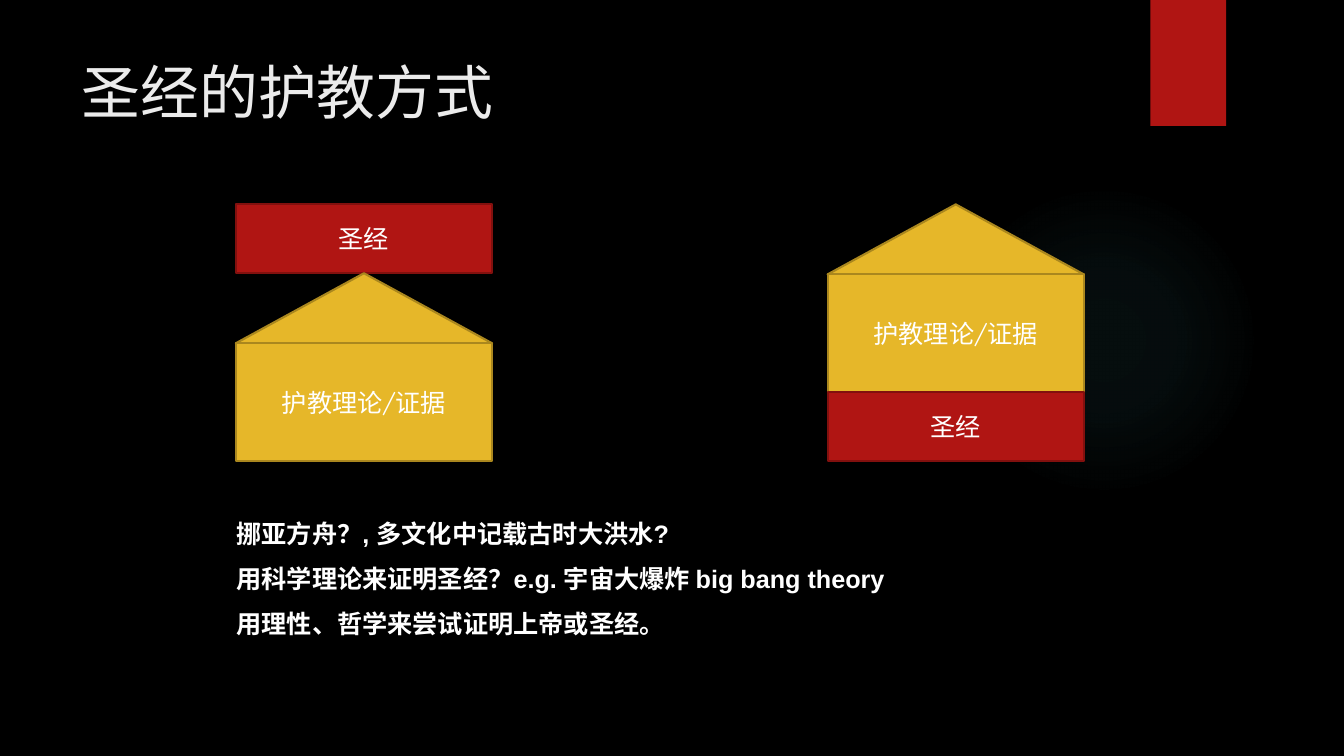
from dataclasses import dataclass

from lxml import etree
from pptx import Presentation
from pptx.dml.color import RGBColor
from pptx.enum.shapes import MSO_SHAPE
from pptx.enum.text import MSO_ANCHOR, MSO_AUTO_SIZE, PP_ALIGN
from pptx.oxml import parse_xml
from pptx.oxml.ns import nsdecls, qn
from pptx.util import Pt

RECT, TRIANGLE, OVAL = MSO_SHAPE.RECTANGLE, MSO_SHAPE.ISOSCELES_TRIANGLE, MSO_SHAPE.OVAL
TOP, MIDDLE = MSO_ANCHOR.TOP, MSO_ANCHOR.MIDDLE
LEFT, CENTER = PP_ALIGN.LEFT, PP_ALIGN.CENTER
FIXED = MSO_AUTO_SIZE.NONE
TITLE_ONLY = 5


@dataclass(frozen=True)
class Theme:
    background: str = "000000"
    red: str = "B01513"
    red_edge: str = "82100E"
    gold: str = "E6B729"
    gold_edge: str = "AA871E"
    title: str = "EBEBEB"
    text: str = "FFFFFF"
    glow: str = "50B9C1"
    heading_font: str = "Quicksand"
    body_font: str = "Arial"
    title_size: int = 42
    text_size: int = 18


theme = Theme()


def add_text(p, text, font, size, color, bold=False):
    r = p.add_run()
    r.text = text
    r.font.name = font
    r.font.size = Pt(size)
    r.font.bold = bold
    r.font.color.rgb = RGBColor.from_string(color)


def add_block(shapes, kind, x, y, w, h, fill, edge=None):
    """Add a flat filled shape, outlined only when an edge colour is given."""
    sp = shapes.add_shape(kind, Pt(x), Pt(y), Pt(w), Pt(h))
    sp.shadow.inherit = False
    sp.fill.solid()
    sp.fill.fore_color.rgb = RGBColor.from_string(fill)
    if edge:
        sp.line.color.rgb = RGBColor.from_string(edge)
        sp.line.width = Pt(1.5)
    else:
        sp.line.fill.background()
    return sp


prs = Presentation()
prs.slide_width, prs.slide_height = Pt(960), Pt(540)
s = prs.slides.add_slide(prs.slide_layouts[TITLE_ONLY])
s.background.fill.solid()
s.background.fill.fore_color.rgb = RGBColor.from_string(theme.background)

# Soft round glow and red ribbon behind the content
glow = add_block(s.shapes, OVAL, 677.5, 131.8, 221.8, 221.8, theme.glow)
gradient = parse_xml(
    f'<a:gradFill {nsdecls("a")} rotWithShape="1"><a:gsLst/><a:path path="circle">'
    '<a:fillToRect l="50000" t="50000" r="50000" b="50000"/></a:path></a:gradFill>')
for position, opacity in ((0, 7), (36, 6), (69, 0)):
    stop = etree.SubElement(gradient[0], qn("a:gs"), pos=str(position * 1000))
    color = etree.SubElement(stop, qn("a:srgbClr"), val=theme.glow)
    etree.SubElement(color, qn("a:alpha"), val=str(opacity * 1000))
solid = glow._element.spPr.find(qn("a:solidFill"))
solid.getparent().replace(solid, gradient)
add_block(s.shapes, RECT, 821.8, 0, 54, 90, theme.red)

title = s.shapes.title
title.left, title.top, title.width, title.height = Pt(51.1), Pt(36), Pt(741), Pt(110)
tf = title.text_frame
tf.word_wrap = True
tf.auto_size = FIXED
tf.vertical_anchor = TOP
p = tf.paragraphs[0]
p.alignment = LEFT
add_text(p, "圣经的护教方式", theme.heading_font, theme.title_size, theme.title)

# Two stacks of the same parts: Bible above the house, or Bible as its foundation
STACK_TOP, STACK_WIDTH = 146, 183
bible = (RECT, 49.2, theme.red, theme.red_edge, "圣经")
roof = (TRIANGLE, 50, theme.gold, theme.gold_edge, "")
wall = (RECT, 84, theme.gold, theme.gold_edge, "护教理论/证据")
for x, parts in ((168.5, (bible, roof, wall)), (591.2, (roof, wall, bible))):
    y = STACK_TOP
    for kind, height, fill, edge, label in parts:
        sp = add_block(s.shapes, kind, x, y, STACK_WIDTH, height, fill, edge)
        y += height
        if label:
            tf = sp.text_frame
            tf.word_wrap = True
            tf.vertical_anchor = MIDDLE
            p = tf.paragraphs[0]
            p.alignment = CENTER
            add_text(p, label, theme.heading_font, theme.text_size, theme.text)

questions = (
    "挪亚方舟？, 多文化中记载古时大洪水?",
    "用科学理论来证明圣经？e.g. 宇宙大爆炸 big bang theory",
    "用理性、哲学来尝试证明上帝或圣经。",
)
tf = s.shapes.add_textbox(Pt(161.8), Pt(355.7), Pt(592), Pt(160)).text_frame
tf.word_wrap = True
tf.auto_size = FIXED
for i, question in enumerate(questions):
    p = tf.add_paragraph() if i else tf.paragraphs[0]
    p.line_spacing = 1.5
    add_text(p, question, theme.body_font, theme.text_size, theme.text, bold=True)

prs.save("out.pptx")
